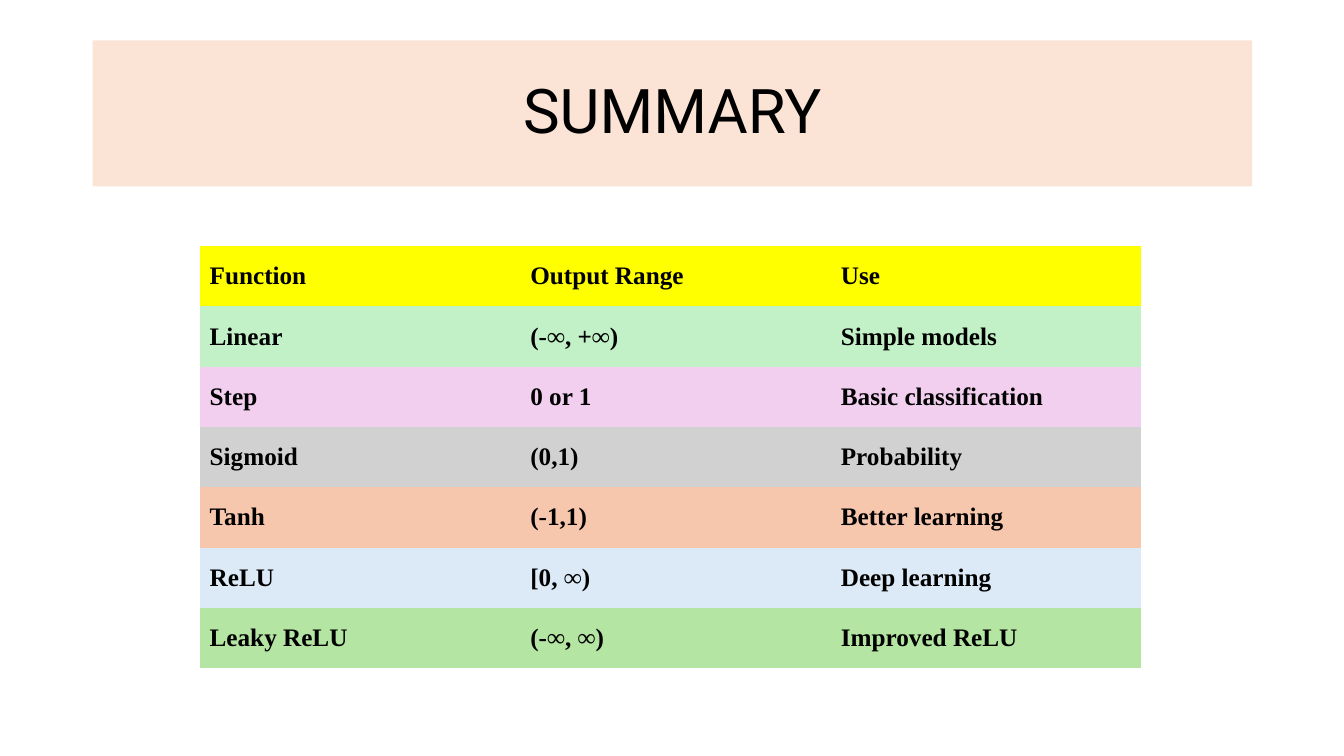
from pptx import Presentation
from pptx.dml.color import RGBColor
from pptx.enum.shapes import MSO_SHAPE
from pptx.enum.text import MSO_ANCHOR, PP_ALIGN
from pptx.oxml.ns import qn
from pptx.util import Inches, Pt

RECTANGLE = MSO_SHAPE.RECTANGLE
MIDDLE = MSO_ANCHOR.MIDDLE
CENTER = PP_ALIGN.CENTER

BLACK = RGBColor(0x00, 0x00, 0x00)
PEACH = RGBColor(0xFB, 0xE3, 0xD6)
YELLOW = RGBColor(0xFF, 0xFF, 0x00)
MINT = RGBColor(0xC2, 0xF1, 0xC8)
PINK = RGBColor(0xF2, 0xCF, 0xEE)
GRAY = RGBColor(0xD1, 0xD1, 0xD1)
ORANGE = RGBColor(0xF6, 0xC6, 0xAD)
BLUE = RGBColor(0xDC, 0xEA, 0xF7)
GREEN = RGBColor(0xB4, 0xE5, 0xA2)

TITLE = "SUMMARY"
ROWS = [
    (YELLOW, ("Function", "Output Range", "Use")),
    (MINT, ("Linear", "(-∞, +∞)", "Simple models")),
    (PINK, ("Step", "0 or 1", "Basic classification")),
    (GRAY, ("Sigmoid", "(0,1)", "Probability")),
    (ORANGE, ("Tanh", "(-1,1)", "Better learning")),
    (BLUE, ("ReLU", "[0, ∞)", "Deep learning")),
    (GREEN, ("Leaky ReLU", "(-∞, ∞)", "Improved ReLU")),
]
COLUMN_WIDTHS = (3.18, 3.08, 3.08)
TABLE_LEFT, TABLE_TOP, TABLE_HEIGHT = 1.98, 2.44, 4.19
PLAIN_TABLE_STYLE = "{2D5ABB26-0587-4C30-8999-92F81FD0307C}"

TITLE_FONT = {"name": "Roboto", "size": Pt(44), "bold": False}
CELL_FONT = {"name": "Times New Roman", "size": Pt(18), "bold": True}


def write(frame, text, style):
    para = frame.paragraphs[0]
    span = para.add_run()
    span.text = text
    for name, value in style.items():
        setattr(span.font, name, value)
    span.font.color.rgb = BLACK
    return para


def add_title(page):
    box = page.shapes.add_shape(
        RECTANGLE, Inches(0.92), Inches(0.4), Inches(11.5), Inches(1.45))
    box.shadow.inherit = False
    box.fill.solid()
    box.fill.fore_color.rgb = PEACH
    box.line.fill.background()
    box.text_frame.word_wrap = True
    box.text_frame.vertical_anchor = MIDDLE
    para = write(box.text_frame, TITLE, TITLE_FONT)
    para.alignment = CENTER
    para.line_spacing = 0.9


def add_function_table(page):
    table = page.shapes.add_table(
        len(ROWS), len(COLUMN_WIDTHS), Inches(TABLE_LEFT), Inches(TABLE_TOP),
        Inches(sum(COLUMN_WIDTHS)), Inches(TABLE_HEIGHT)).table
    table._tbl.tblPr.find(qn("a:tableStyleId")).text = PLAIN_TABLE_STYLE
    for column, width in zip(table.columns, COLUMN_WIDTHS):
        column.width = Inches(width)
    for row, (color, texts) in zip(table.rows, ROWS):
        for cell, text in zip(row.cells, texts):
            cell.fill.solid()
            cell.fill.fore_color.rgb = color
            cell.vertical_anchor = MIDDLE
            write(cell.text_frame, text, CELL_FONT)


def main():
    deck = Presentation()
    deck.slide_width = Inches(13.33)
    deck.slide_height = Inches(7.5)
    page = deck.slides.add_slide(deck.slide_layouts[6])
    add_title(page)
    add_function_table(page)
    deck.save("out.pptx")


if __name__ == "__main__":
    main()
